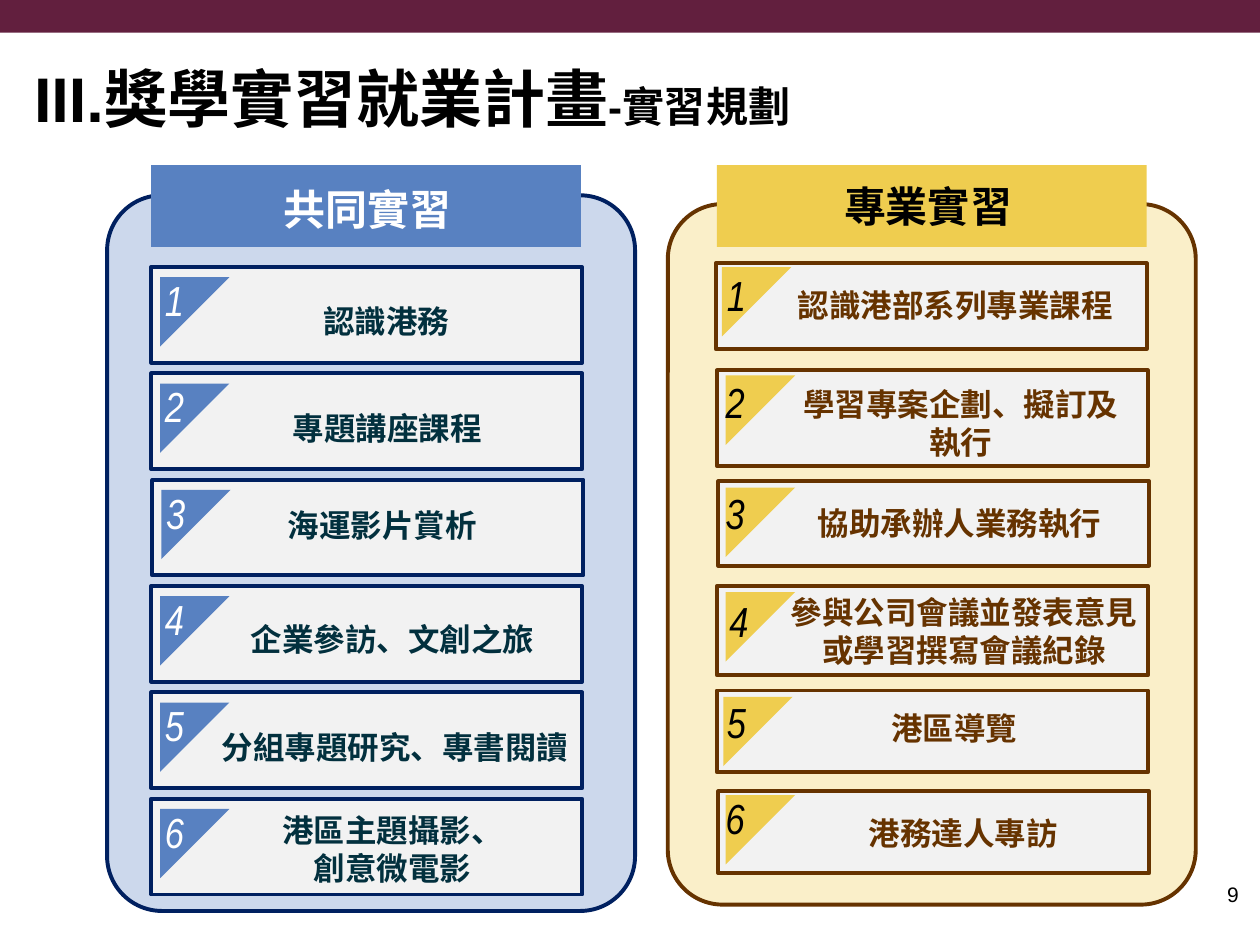
from pptx import Presentation
from pptx.util import Inches, Pt
from pptx.dml.color import RGBColor
from pptx.enum import shapes, text
from pptx.oxml.ns import qn
from lxml import etree

KIND = shapes.MSO_SHAPE
ALIGN = text.PP_ALIGN
color = RGBColor.from_string


def add_block(target, kind, at, fill, line=None):
    block = target.add_shape(kind, *map(Inches, at))
    block.shadow.inherit = False
    block.fill.solid()
    block.fill.fore_color.rgb = color(fill)
    if line:
        block.line.color.rgb = color(line)
        block.line.width = Pt(2.25)
    else:
        block.line.fill.background()
    return block


def add_label(target, words, at, size, font, ink, align=ALIGN.CENTER,
              bold=False, italic=False, wrap=True):
    box = target.add_textbox(*map(Inches, at))
    frame = box.text_frame
    frame.text = words
    frame.word_wrap = wrap
    frame.auto_size = text.MSO_AUTO_SIZE.SHAPE_TO_FIT_TEXT
    for para in frame.paragraphs:
        para.alignment = align
        for span in para.runs:
            span.font.size = Pt(size)
            span.font.name = font
            span.font.bold = bold
            span.font.italic = italic
            span.font.color.rgb = color(ink)
    return box


deck = Presentation()
deck.slide_width, deck.slide_height = Inches(10), Inches(7.5)
page = deck.slides.add_slide(deck.slide_layouts[5])

# Top band
add_block(page.shapes, KIND.RECTANGLE, (-0.03, -0.03, 10.04, 0.29), "621F3E")

# Title
title = page.shapes.title
title.left, title.top, title.width, title.height = map(
    Inches, (0.17, 0.3, 7.66, 0.95))
frame = title.text_frame
frame.auto_size = text.MSO_AUTO_SIZE.NONE
frame.vertical_anchor = text.MSO_ANCHOR.MIDDLE
para = frame.paragraphs[0]
para.alignment = ALIGN.LEFT
for words, size in (("III.獎學實習就業計畫", 36), ("-實習規劃", 24)):
    span = para.add_run()
    span.text = words
    span.font.size = Pt(size)
    span.font.name = "Arial"
    span.font.bold = True
    span.font.color.rgb = color("000000")

# Page number
add_label(page.shapes, "9", (7.6, 6.95, 2.33, 0.3), 12, "Arial", "000000",
          ALIGN.RIGHT)

# Rows: frame (left, top, height), triangle, number, label (left, top, width), words
common_labels = [
    ((1.75, 2.35, 2.63), "認識港務"),
    ((1.64, 3.2, 2.87), "專題講座課程"),
    ((1.72, 3.97, 2.63), "海運影片賞析"),
    ((1.68, 4.87, 2.87), "企業參訪、文創之旅"),
    ((1.64, 5.73, 2.99), "分組專題研究、專書閱讀"),
    ((1.8, 6.39, 2.63), "港區主題攝影、\n創意微電影"),
]
common_rows = []
for index, (spot, words) in enumerate(common_labels):
    left = 1.21 if index == 2 else 1.2
    top = 2.12 + 0.844 * index
    common_rows.append(((left, top, 0.76), (left + 0.07, top + 0.08),
                        (left + 0.01, top + 0.01), spot, words))

special_rows = [
    ((5.68, 2.09, 0.68), (5.73, 2.12), (5.67, 2.09), (6.08, 2.22, 3),
     "認識港部系列專業課程"),
    ((5.69, 2.94, 0.76), (5.76, 2.98), (5.66, 2.94), (6.19, 3.01, 2.87),
     "學習專案企劃、擬訂及執行"),
    ((5.7, 3.82, 0.67), (5.76, 3.87), (5.66, 3.82), (6.3, 3.95, 2.63),
     "協助承辦人業務執行"),
    ((5.69, 4.65, 0.71), (5.76, 4.7), (5.69, 4.68), (6.15, 4.66, 3),
     "參與公司會議並發表意見或學習撰寫會議紀錄"),
    ((5.69, 5.48, 0.65), (5.74, 5.53), (5.67, 5.48), (6.26, 5.58, 2.63),
     "港區導覽"),
    ((5.7, 6.28, 0.65), (5.76, 6.31), (5.66, 6.24), (6.33, 6.41, 2.63),
     "港務達人專訪"),
]

# Columns: panel, header, header label, header words, fill, line, ink, number ink, rows
columns = [
    ((5.3, 1.62, 4.19, 5.56), (5.69, 1.31, 3.41, 0.65), (6.59, 1.38, 1.55, 0.5),
     "專業實習", "EFCD4F", "663300", "663300", "000000", special_rows),
    ((0.85, 1.55, 4.19, 5.68), (1.2, 1.31, 3.41, 0.65), (1.23, 1.41, 3.37, 0.5),
     "共同實習", "5881C1", "002060", "02303E", "FFFFFF", common_rows),
]
for (panel_at, header_at, heading_at, heading, accent, line, ink, number_ink,
     rows) in columns:
    group = page.shapes.add_group_shape().shapes

    # Translucent panel and header
    panel = add_block(group, KIND.ROUNDED_RECTANGLE, panel_at, accent, line)
    panel.adjustments[0] = 0.104
    tint = panel.fill._xPr.find(qn("a:solidFill"))[0]
    etree.SubElement(tint, qn("a:alpha"), val="30000")
    add_block(group, KIND.RECTANGLE, header_at, accent)
    add_label(group, heading, heading_at, 24, "Calibri", number_ink, bold=True)

    # Numbered rows
    for number, (bar, corner, digit, spot, words) in enumerate(rows, 1):
        left, top, height = bar
        add_block(group, KIND.RECTANGLE, (left, top, 3.42, height), "F2F2F2", line)
        triangle = add_block(group, KIND.RIGHT_TRIANGLE, (*corner, 0.55, 0.55), accent)
        triangle.rotation = 90
        add_label(group, str(number), (*digit, 0.33 if number == 1 else 0.38, 0.5),
                  24, "Arial Narrow", number_ink, ALIGN.LEFT, italic=True, wrap=False)
        tall = len(words) > 11
        add_label(group, words, (*spot, 0.71 if tall else 0.4), 18, "Calibri", ink,
                  bold=True)

deck.save("out.pptx")
